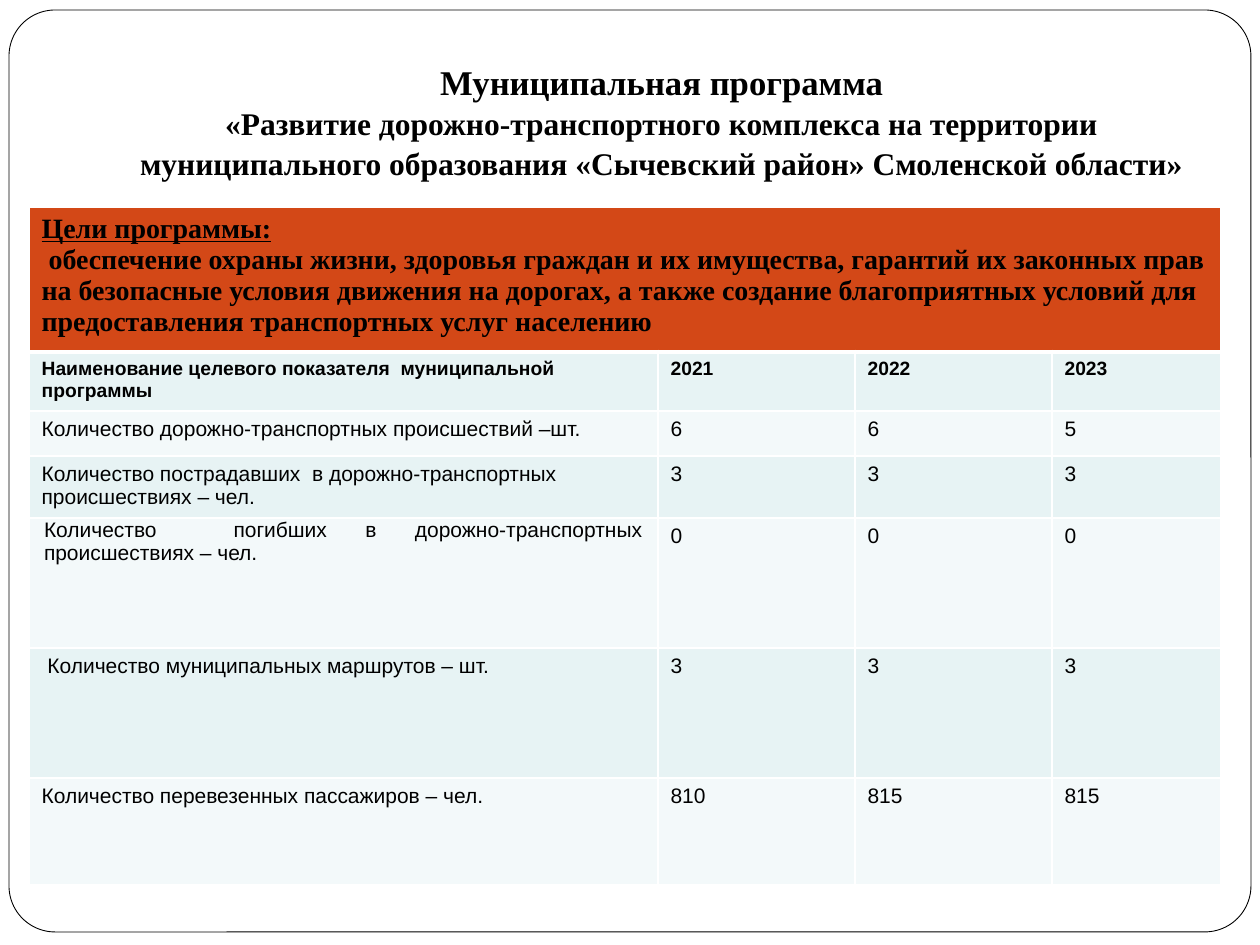
from dataclasses import dataclass

from lxml.etree import SubElement
from pptx import Presentation
from pptx.dml.color import RGBColor
from pptx.enum.shapes import MSO_SHAPE as Preset
from pptx.enum.text import MSO_ANCHOR as Anchor, MSO_AUTO_SIZE as AutoSize, PP_ALIGN as Align
from pptx.oxml.ns import qn
from pptx.util import Emu, Pt

EMU_PER_PX = 914400 / 126


@dataclass(frozen=True)
class Theme:
    serif: str = "Times New Roman"
    sans: str = "Arial"
    ink: str = "000000"
    paper: str = "FFFFFF"
    accent: str = "D34817"
    bands: tuple = ("E7F3F4", "F3F9FA")
    title_size: float = 19.8
    subtitle_size: float = 18
    goal_size: float = 16
    heading_size: float = 11
    body_size: float = 12


THEME = Theme()

TITLE = "Муниципальная программа"
SUBTITLE = ("«Развитие дорожно-транспортного комплекса на территории "
            "муниципального образования «Сычевский район» Смоленской области»")
GOAL_HEADING = "Цели программы:"
GOAL = (" обеспечение охраны жизни, здоровья граждан и их имущества, гарантий их "
        "законных прав на безопасные условия движения на дорогах, а также создание "
        "благоприятных условий для предоставления транспортных услуг населению")
INDICATORS = [
    ("Наименование целевого показателя  муниципальной программы", 2021, 2022, 2023),
    ("Количество дорожно-транспортных происшествий –шт.", 6, 6, 5),
    ("Количество пострадавших  в дорожно-транспортных происшествиях – чел.", 3, 3, 3),
    ("Количество  погибших в дорожно-транспортных происшествиях – чел.", 0, 0, 0),
    (" Количество муниципальных маршрутов – шт.", 3, 3, 3),
    ("Количество перевезенных пассажиров – чел.", 810, 815, 815),
]
DEATHS_ROW = 4
COLUMN_WIDTHS = (629, 197, 197, 169)
ROW_HEIGHTS = (145, 59, 45, 62, 130, 130, 107)


def px(length):
    return Emu(round(length * EMU_PER_PX))


def rgb(code):
    return RGBColor.from_string(code)


def style(run, font, size, bold=False, underline=False):
    run.font.name = font
    run.font.size = Pt(size)
    run.font.bold = bold
    run.font.underline = underline
    run.font.color.rgb = rgb(THEME.ink)


def draw_frame(slide, left, top, width, height):
    frame = slide.shapes.add_shape(Preset.ROUNDED_RECTANGLE,
                                   px(left), px(top), px(width), px(height))
    frame.adjustments[0] = 0.05
    frame.shadow.inherit = False
    frame.fill.solid()
    frame.fill.fore_color.rgb = rgb(THEME.paper)
    frame.line.color.rgb = rgb(THEME.ink)
    frame.line.width = Pt(0.5)
    # The frame lies behind the title placeholder.
    slide.shapes._spTree.insert(2, frame._element)


def place_title(slide, left, top, width, height):
    title = slide.shapes.title
    title.left, title.top, title.width, title.height = map(px, (left, top, width, height))
    text = title.text_frame
    text.word_wrap = True
    text.auto_size = AutoSize.NONE
    text.vertical_anchor = Anchor.BOTTOM
    text.margin_bottom = px(13)
    text.text = f"{TITLE}\v{SUBTITLE}"
    heading = text.paragraphs[0]
    heading.alignment = Align.CENTER
    heading.line_spacing = 1.05
    for run, size in zip(heading.runs, (THEME.title_size, THEME.subtitle_size)):
        style(run, THEME.serif, size, bold=True)
    # An unsized break would take the template's large title size.
    line_break = heading._p.find(qn("a:br"))
    SubElement(line_break, qn("a:rPr"), sz=str(round(THEME.title_size * 100)))


def finish_cell(cell, fill, top=1, bottom=1):
    """Borders come before the fill in the cell's XML; widths are in points."""
    properties = cell._tc.get_or_add_tcPr()
    for side, width in (("L", 1), ("R", 1), ("T", top), ("B", bottom)):
        border = SubElement(properties, qn(f"a:ln{side}"), w=str(Pt(width)))
        paint = SubElement(border, qn("a:solidFill"))
        SubElement(paint, qn("a:srgbClr"), val=THEME.paper)
    cell.fill.solid()
    cell.fill.fore_color.rgb = rgb(fill)


def fill_goal(table):
    goal = table.cell(0, 0)
    goal.merge(table.cell(0, len(COLUMN_WIDTHS) - 1))
    goal.text_frame.text = f"{GOAL_HEADING}\n{GOAL}"
    for paragraph, underline in zip(goal.text_frame.paragraphs, (True, False)):
        style(paragraph.runs[0], THEME.serif, THEME.goal_size, True, underline)
    for column in range(len(COLUMN_WIDTHS)):
        finish_cell(table.cell(0, column), THEME.accent, bottom=3)


def fill_indicators(table):
    for row, values in enumerate(INDICATORS, start=1):
        is_heading = row == 1
        size = THEME.heading_size if is_heading else THEME.body_size
        for column, value in enumerate(values):
            cell = table.cell(row, column)
            cell.text_frame.text = str(value)
            style(cell.text_frame.paragraphs[0].runs[0], THEME.sans, size, is_heading)
            finish_cell(cell, THEME.bands[(row - 1) % 2], top=3 if is_heading else 1)
    deaths = table.cell(DEATHS_ROW, 0)
    deaths.text_frame.paragraphs[0].alignment = Align.JUSTIFY
    deaths.margin_left = deaths.margin_right = px(15)
    deaths.margin_top = deaths.margin_bottom = 0


def place_table(slide, left, top):
    table = slide.shapes.add_table(
        len(ROW_HEIGHTS), len(COLUMN_WIDTHS), px(left), px(top),
        px(sum(COLUMN_WIDTHS)), px(sum(ROW_HEIGHTS))).table
    for column, width in zip(table.columns, COLUMN_WIDTHS):
        column.width = px(width)
    for row, height in zip(table.rows, ROW_HEIGHTS):
        row.height = px(height)
    fill_goal(table)
    fill_indicators(table)


def main():
    deck = Presentation()
    deck.slide_width, deck.slide_height = px(1260), px(945)
    slide = deck.slides.add_slide(deck.slide_layouts[5])
    draw_frame(slide, 9, 10, 1242, 922)
    place_title(slide, 126, 38, 1071, 157)
    place_table(slide, 29, 207)
    deck.save("out.pptx")


if __name__ == "__main__":
    main()
